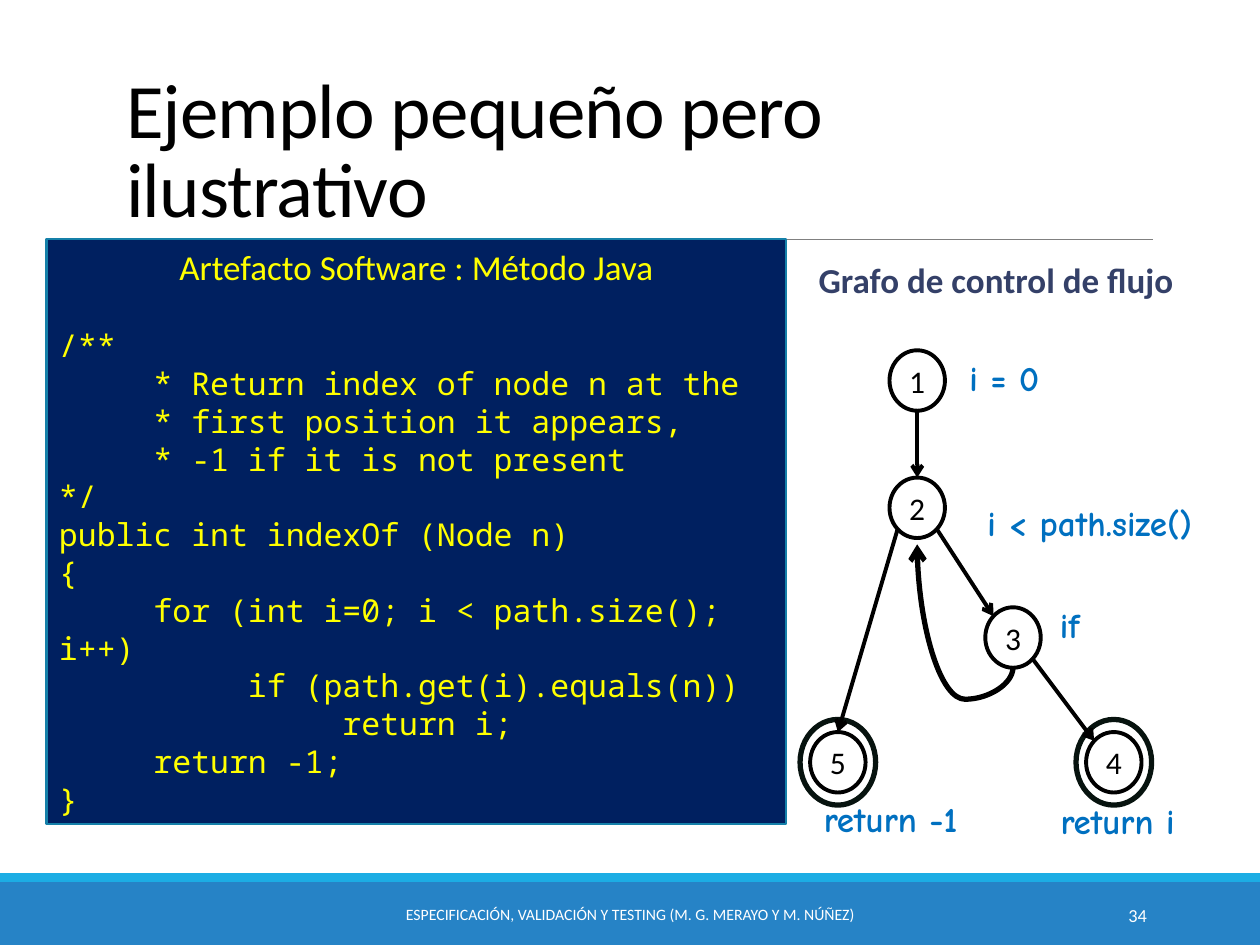
from collections import namedtuple

from lxml import etree
from pptx import Presentation
from pptx.dml.color import RGBColor
from pptx.enum import shapes, text
from pptx.oxml.ns import qn
from pptx.util import Inches, Pt

BLACK = RGBColor(0x00, 0x00, 0x00)
WHITE = RGBColor(0xFF, 0xFF, 0xFF)
GREY = RGBColor(0x80, 0x80, 0x80)
BAND_BLUE = RGBColor(0x26, 0x83, 0xC6)
STRIPE_BLUE = RGBColor(0x1C, 0xAD, 0xE4)
NAVY = RGBColor(0x00, 0x20, 0x60)
CODE_BORDER = RGBColor(0x15, 0x80, 0xA9)
YELLOW = RGBColor(0xFF, 0xFF, 0x00)
HEADING_BLUE = RGBColor(0x34, 0x40, 0x68)
LABEL_BLUE = RGBColor(0x00, 0x70, 0xC0)
RING = RGBColor(0x07, 0x13, 0x0F)

SANS, MONO, COMIC = "Calibri", "Noto Sans Mono", "Comic Neue"
CODE_INDENT = 0.75
NODE_W, NODE_H = 0.44, 0.48
DIAGONAL = 0.71

Box = namedtuple("Box", "left top width height")

# indent level, line
CODE = [
    (0, "/**"),
    (1, "* Return index of node n at the"),
    (1, "* first position it appears,"),
    (1, "* -1 if it is not present"),
    (0, "*/"),
    (0, "public int indexOf (Node n)"),
    (0, "{"),
    (1, "for (int i=0; i < path.size(); i++)"),
    (2, "if (path.get(i).equals(n))"),
    (3, "return i;"),
    (1, "return -1;"),
    (0, "}"),
]
# Node centres and label centres, relative to the graph's box
NODES = {"1": (1.04, 1.02), "2": (1.04, 2.03), "3": (1.8, 3.06),
         "4": (2.6, 4.05), "5": (0.41, 4.05)}
FINAL_NODES = ("4", "5")
LABELS = [("i = 0", 1.73, 1.0, 0.98), ("i < path.size()", 2.41, 2.15, 2.36),
          ("if", 2.25, 2.96, 0.63), ("return i", 2.63, 4.51, 1.47),
          ("return -1", 0.83, 4.5, 1.66)]
# start node, side (x, y), end node, side (x, y)
EDGES = [("1", (0, 1), "2", (0, -1)),
         ("2", (-DIAGONAL, DIAGONAL), "5", (0, -1)),
         ("3", (DIAGONAL, DIAGONAL), "4", (-DIAGONAL, -DIAGONAL)),
         ("2", (DIAGONAL, DIAGONAL), "3", (-DIAGONAL, -DIAGONAL))]


def style(para, font, size, color, align=text.PP_ALIGN.CENTER, bold=False):
    para.alignment = align
    for span in para.runs:
        span.font.name, span.font.size, span.font.bold = font, Pt(size), bold
        span.font.color.rgb = color


def add_block(page, kind, box, fill, line=None, width=0):
    block = page.shapes.add_shape(kind, *map(Inches, box))
    block.shadow.inherit = False
    block.fill.solid()
    block.fill.fore_color.rgb = fill
    if line is None:
        block.line.fill.background()
    else:
        block.line.color.rgb = line
        block.line.width = Pt(width)
    return block


def add_label(page, box, words, font, size, color, **options):
    label = page.shapes.add_textbox(*map(Inches, box))
    frame = label.text_frame
    frame.word_wrap = True
    frame.vertical_anchor = text.MSO_ANCHOR.MIDDLE
    frame.text = words
    style(frame.paragraphs[0], font, size, color, **options)


def add_line(page, start, end, color, width, arrow=False,
             kind=shapes.MSO_CONNECTOR.STRAIGHT):
    line = page.shapes.add_connector(kind, *map(Inches, (*start, *end)))
    line.line.color.rgb = color
    line.line.width = Pt(width)
    if arrow:
        etree.SubElement(line.line._get_or_add_ln(), qn("a:tailEnd"), type="arrow")
    etree.SubElement(line._element.spPr, qn("a:effectLst"))
    return line


def add_back_edge(page, start, end, bend):
    """Curve that leaves start downwards and enters end upwards."""
    curve = add_line(page, start, end, BLACK, 3, arrow=True,
                     kind=shapes.MSO_CONNECTOR.CURVE)
    across, up = start[0] - end[0], start[1] - end[1]
    middle_x, middle_y = (start[0] + end[0]) / 2, (start[1] + end[1]) / 2
    curve.left, curve.top = Inches(middle_x - up / 2), Inches(middle_y - across / 2)
    curve.width, curve.height = Inches(up), Inches(across)
    properties = curve._element.spPr
    frame = properties.find(qn("a:xfrm"))
    frame.attrib.pop("flipV", None)
    frame.set("rot", "5400000")
    frame.set("flipH", "1")
    geometry = properties.find(qn("a:prstGeom"))
    guides = geometry.find(qn("a:avLst"))
    if guides is None:
        guides = etree.SubElement(geometry, qn("a:avLst"))
    etree.SubElement(guides, qn("a:gd"), name="adj1",
                     fmla=f"val {round(bend * 100000)}")


def add_title(page, box):
    title = page.shapes.title
    title.left, title.top, title.width, title.height = map(Inches, box)
    frame = title.text_frame
    frame.text = "Ejemplo pequeño pero ilustrativo"
    frame.word_wrap = True
    frame.auto_size = text.MSO_AUTO_SIZE.NONE
    frame.vertical_anchor = text.MSO_ANCHOR.BOTTOM
    frame.margin_right = Inches(0.2)
    para = frame.paragraphs[0]
    style(para, SANS, 44, BLACK, align=text.PP_ALIGN.LEFT)
    para.line_spacing = 0.85
    para.runs[0].font._element.set("spc", "-50")
    bottom = box.top + box.height
    add_line(page, (box.left + 0.08, bottom), (box.left + box.width, bottom), GREY, 0.5)


def add_footer(page, box):
    stripe = 0.07
    rectangle = shapes.MSO_SHAPE.RECTANGLE
    add_block(page, rectangle, box, BAND_BLUE)
    add_block(page, rectangle, (box.left, box.top - stripe, box.width, stripe), STRIPE_BLUE)
    top = box.top + 0.06
    add_label(page, (box.left + 3.02, top, 3.96, 0.4),
              "ESPECIFICACIÓN, VALIDACIÓN Y TESTING (M. G. MERAYO Y M. NÚÑEZ)",
              SANS, 9, WHITE)
    add_label(page, (box.left + 8.12, top, 1.08, 0.4), "34", SANS, 10.5, WHITE,
              align=text.PP_ALIGN.RIGHT)


def add_code(page, box):
    panel = add_block(page, shapes.MSO_SHAPE.RECTANGLE, box, NAVY, CODE_BORDER, 1.25)
    frame = panel.text_frame
    frame.word_wrap = True
    frame.vertical_anchor = text.MSO_ANCHOR.MIDDLE
    frame.text = "Artefacto Software : Método Java"
    heading = frame.paragraphs[0]
    style(heading, SANS, 20, YELLOW)
    heading.space_after = Pt(22)
    for level, words in CODE:
        para = frame.add_paragraph()
        para.text = words
        style(para, MONO, 18, YELLOW, align=text.PP_ALIGN.LEFT)
        properties = para._p.get_or_add_pPr()
        properties.set("marL", "0")
        properties.set("indent", str(Inches(level * CODE_INDENT)))


def add_graph(page, box):
    centres = {name: (box.left + x, box.top + y) for name, (x, y) in NODES.items()}

    def port(name, side):
        x, y = centres[name]
        return x + side[0] * NODE_W / 2, y + side[1] * NODE_H / 2

    def add_circle(name, width, height, color, weight):
        x, y = centres[name]
        return add_block(page, shapes.MSO_SHAPE.OVAL,
                         (x - width / 2, y - height / 2, width, height),
                         WHITE, color, weight)

    for name in FINAL_NODES:
        add_circle(name, 0.6, 0.68, RING, 3)
    for name in NODES:
        frame = add_circle(name, NODE_W, NODE_H, BLACK, 2.25).text_frame
        frame.margin_left = frame.margin_right = 0
        frame.vertical_anchor = text.MSO_ANCHOR.MIDDLE
        frame.text = name
        style(frame.paragraphs[0], SANS, 18, BLACK)
    for start, start_side, end, end_side in EDGES:
        add_line(page, port(start, start_side), port(end, end_side), BLACK, 2.25, arrow=True)
    loop_x, loop_y = port("2", (0, 1))
    add_back_edge(page, port("3", (0, 1)), (loop_x, loop_y + 0.05), -0.255)
    for words, x, y, width in LABELS:
        add_label(page, (box.left + x - width / 2, box.top + y - 0.22, width, 0.44),
                  words, COMIC, 20, LABEL_BLUE, bold=True)
    add_label(page, (box.left + 0.13, box.top, 3.07, 0.44),
              "Grafo de control de flujo", SANS, 20, HEADING_BLUE, bold=True)


def main():
    deck = Presentation()
    deck.slide_width, deck.slide_height = Inches(10), Inches(7.5)
    page = deck.slides.add_slide(deck.slide_layouts[5])
    add_footer(page, Box(0, 7, 10, 0.5))
    add_title(page, Box(0.9, 0.31, 8.25, 1.59))
    add_graph(page, Box(6.24, 2, 3.59, 4.73))
    add_code(page, Box(0.37, 1.9, 5.87, 4.64))
    deck.save("out.pptx")


if __name__ == "__main__":
    main()
